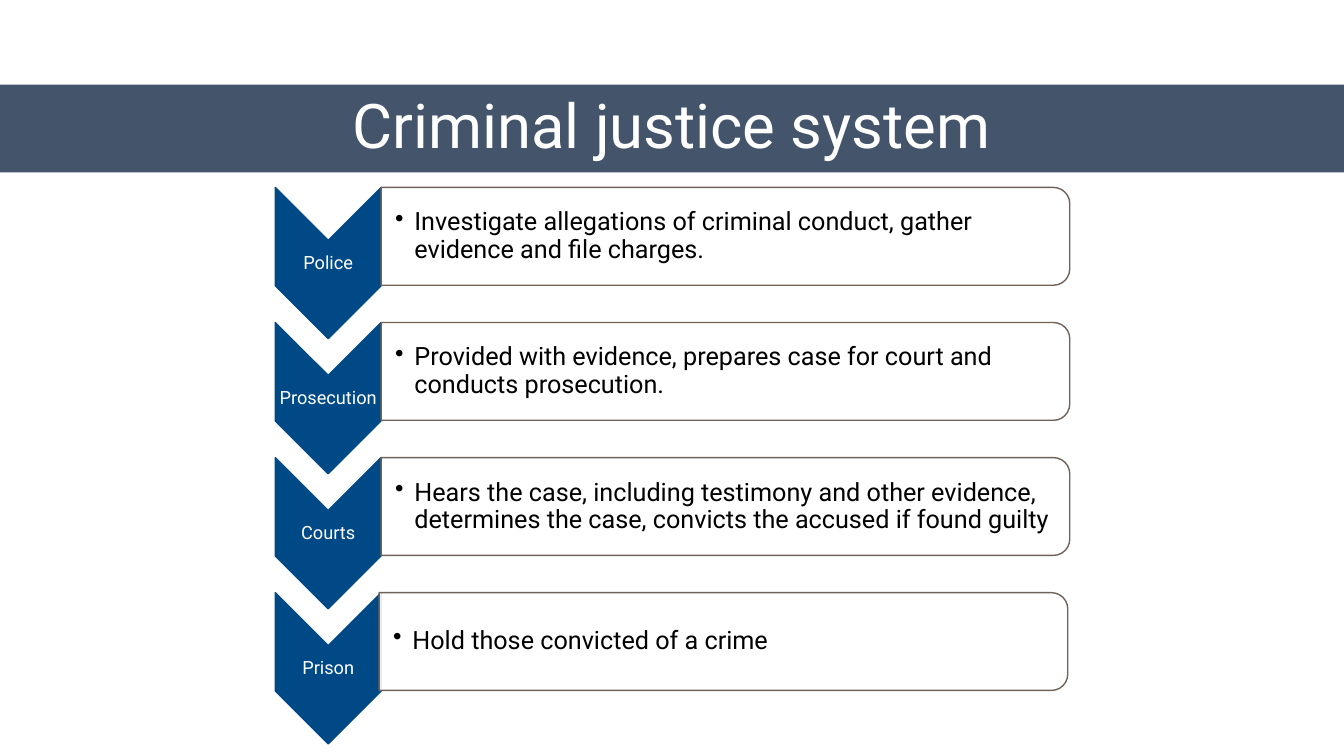
from lxml import etree
from pptx import Presentation
from pptx.dml.color import RGBColor
from pptx.enum.shapes import MSO_SHAPE as SHAPE
from pptx.enum.text import MSO_ANCHOR as ANCHOR, PP_ALIGN as ALIGN
from pptx.oxml.ns import qn
from pptx.util import Inches, Pt

FONT = "Roboto"
SLATE, BLUE, BROWN, WHITE, BLACK = "44546A", "004987", "6E6259", "FFFFFF", "000000"

# Stage, description, sideways shift of the description
STAGES = [
    ("Police", "Investigate allegations of criminal conduct, gather evidence and file charges.", 0),
    ("Prosecution", "Provided with evidence, prepares case for court and conducts prosecution.", 0),
    ("Courts", "Hears the case, including testimony and other evidence, "
               "determines the case, convicts the accused if found guilty", 0),
    ("Prison", "Hold those convicted of a crime", -0.02),
]
ROW_PITCH = 1.34


def rgb(value):
    return RGBColor.from_string(value)


def add_solid(slide, kind, x, y, w, h, fill, line=None):
    s = slide.shapes.add_shape(kind, Inches(x), Inches(y), Inches(w), Inches(h))
    s.shadow.inherit = False
    s.fill.solid()
    s.fill.fore_color.rgb = rgb(fill)
    if line:
        s.line.color.rgb = rgb(line)
        s.line.width = Pt(1)
    else:
        s.line.fill.background()
    return s


def add_turned(slide, kind, x, y, w, h, fill, line):
    """Add a shape turned by 90 degrees that covers the given box once turned."""
    s = add_solid(slide, kind, x + (w - h) / 2, y + (h - w) / 2, h, w, fill, line)
    s.rotation = 90
    return s


def write(s, text, size, color, align, bullet=False):
    tf = s.text_frame
    tf.word_wrap = True
    tf.vertical_anchor = ANCHOR.MIDDLE
    p = tf.paragraphs[0]
    p.alignment = align
    p.line_spacing = 0.9
    if bullet:
        p.level = 1
        pPr = p._p.get_or_add_pPr()
        pPr.set("marL", str(Inches(0.19)))
        pPr.set("indent", str(-Inches(0.19)))
        etree.SubElement(pPr, qn("a:buChar")).set("char", "•")
    r = p.add_run()
    r.text = text
    r.font.name = FONT
    r.font.size = Pt(size)
    r.font.color.rgb = rgb(color)


def add_label(slide, x, y, w, h, left_inset=0.01):
    s = slide.shapes.add_textbox(Inches(x), Inches(y), Inches(w), Inches(h))
    tf = s.text_frame
    tf.margin_left = Inches(left_inset)
    tf.margin_right = tf.margin_top = tf.margin_bottom = Inches(0.01)
    return s


def add_title_band(slide, x, y, w, h):
    band = add_solid(slide, SHAPE.RECTANGLE, x, y, w, h, SLATE)
    write(band, "Criminal justice system", 44, WHITE, ALIGN.CENTER)


def add_chevron(slide, x, y, w, h, name):
    add_turned(slide, SHAPE.CHEVRON, x, y, w, h, BLUE, BLUE)
    label = add_label(slide, x, y + w / 2, w, h - w)
    write(label, name, 13, WHITE, ALIGN.CENTER)


def add_description(slide, x, y, w, h, text):
    panel = add_turned(slide, SHAPE.ROUND_2_SAME_RECTANGLE, x, y, w, h, WHITE, BROWN)
    color = panel.fill._xPr.find(qn("a:solidFill"))[0]
    etree.SubElement(color, qn("a:alpha")).set("val", "90000")
    label = add_label(slide, x, y + 0.05, w - 0.05, h - 0.1, left_inset=0.14)
    write(label, text, 18, BLACK, ALIGN.LEFT, bullet=True)


def add_stages(slide, x, y):
    for i, (name, text, shift) in enumerate(STAGES):
        top = y + i * ROW_PITCH
        add_chevron(slide, x, top, 1.05, 1.5, name)
        add_description(slide, x + 1.05 + shift, top, 6.83, 0.97, text)


def main():
    prs = Presentation()
    prs.slide_width, prs.slide_height = Inches(13.33), Inches(7.5)
    slide = prs.slides.add_slide(prs.slide_layouts[6])
    add_title_band(slide, 0, 0.84, 13.33, 0.87)
    add_stages(slide, 2.73, 1.86)
    prs.save("out.pptx")


if __name__ == "__main__":
    main()
